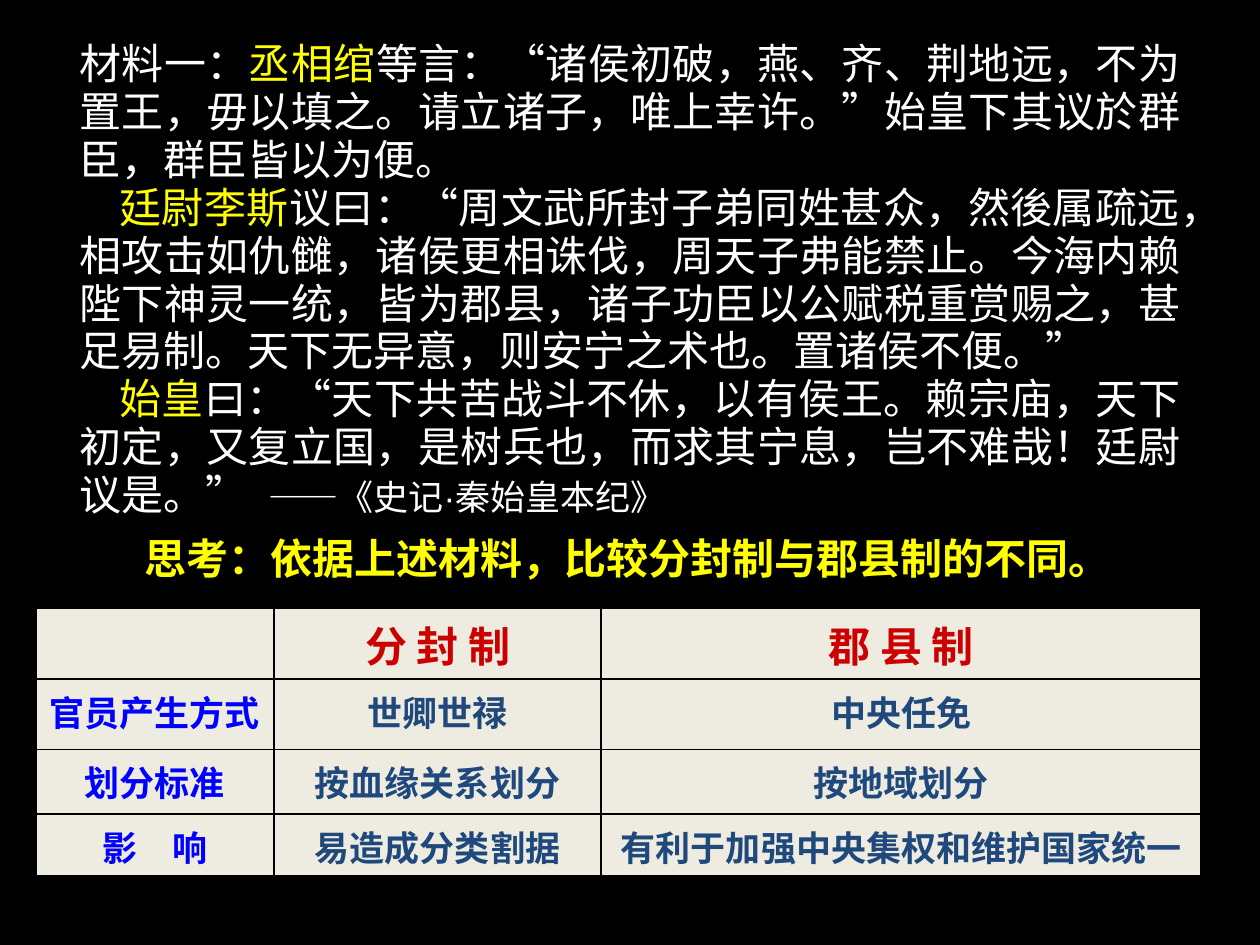
from dataclasses import dataclass

from lxml import etree
from pptx import Presentation
from pptx import util as u
from pptx.dml.color import RGBColor
from pptx.enum import text
from pptx.oxml import ns

COLORS = {
    "black": "000000",
    "white": "FFFFFF",
    "yellow": "FFFF00",
    "red": "CC0000",
    "blue": "0000FF",
    "navy": "1F497D",
    "cream": "EEECE1",
}
LATIN_FONT = "Arial"
CHINESE_FONT = "Noto Sans CJK SC"


@dataclass
class Span:
    text: str
    color: str = "white"
    size: int = 24
    bold: bool = False
    font: str = LATIN_FONT


@dataclass
class Passage:
    spans: list[Span]
    indent: float = 0  # first line, cm
    tab: float = 0  # tab stop, cm


def speaker(name: str) -> Span:
    return Span(name, "yellow", font=CHINESE_FONT)


def quotation(words: str) -> Span:
    return Span(words, font=CHINESE_FONT)


PASSAGES = [
    Passage([
        Span("材料一："),
        speaker("丞相绾"),
        quotation("等言：“诸侯初破，燕、齐、荆地远，不为置王，毋以填之。请立诸子，"
                  "唯上幸许。”始皇下其议於群臣，群臣皆以为便。"),
    ]),
    Passage([
        speaker("廷尉李斯"),
        quotation("议曰：“周文武所封子弟同姓甚众，然後属疏远，相攻击如仇雠，"
                  "诸侯更相诛伐，周天子弗能禁止。今海内赖陛下神灵一统，皆为郡县，"
                  "诸子功臣以公赋税重赏赐之，甚足易制。天下无异意，则安宁之术也。"
                  "置诸侯不便。”"),
    ], indent=0.81),
    Passage([
        speaker("始皇"),
        quotation("曰：“天下共苦战斗不休，以有侯王。赖宗庙，天下初定，又复立国，"
                  "是树兵也，而求其宁息，岂不难哉！廷尉议是。”"),
        Span("\t——《史记·秦始皇本纪》", size=20),
    ], indent=0.81, tab=7.72),
]
QUESTION = Span("思考：依据上述材料，比较分封制与郡县制的不同。",
                "yellow", bold=True, font=CHINESE_FONT)

TABLE_ROWS = [
    ("", "分 封 制", "郡 县 制"),
    ("官员产生方式", "世卿世禄", "中央任免"),
    ("划分标准", "按血缘关系划分", "按地域划分"),
    ("影　响", "易造成分类割据", "有利于加强中央集权和维护国家统一"),
]
COLUMN_WIDTHS = (4.8, 6.6, 12.1)
ROW_HEIGHTS = (1.45, 1.42, 1.3, 1.27)


def rgb(name: str) -> RGBColor:
    return RGBColor.from_string(COLORS[name])


def format_run(run, span: Span) -> None:
    run.font.size = u.Pt(span.size)
    run.font.bold = span.bold
    run.font.color.rgb = rgb(span.color)
    run.font.name = span.font
    east_asian = etree.SubElement(run.font._element, ns.qn("a:ea"))
    east_asian.set("typeface", CHINESE_FONT)


def add_span(paragraph, span: Span) -> None:
    run = paragraph.add_run()
    run.text = span.text
    format_run(run, span)


def add_text_frame(slide, left: float, top: float, width: float, height: float,
                   wrap: bool):
    shape = slide.shapes.add_textbox(u.Cm(left), u.Cm(top), u.Cm(width), u.Cm(height))
    shape.text_frame.word_wrap = wrap
    return shape.text_frame


def add_passage(paragraph, passage: Passage) -> None:
    paragraph.alignment = text.PP_ALIGN.JUSTIFY
    paragraph.line_spacing = 0.95
    properties = paragraph._p.get_or_add_pPr()
    properties.set("indent", str(u.Cm(passage.indent)))
    if passage.tab:
        tabs = etree.SubElement(properties, ns.qn("a:tabLst"))
        etree.SubElement(tabs, ns.qn("a:tab"), pos=str(u.Cm(passage.tab)), algn="l")
    for span in passage.spans:
        add_span(paragraph, span)


def set_borders(cell, widths: dict[str, float]) -> None:
    properties = cell._tc.get_or_add_tcPr()
    for position, (side, width) in enumerate(widths.items()):
        line = etree.Element(ns.qn(f"a:ln{side}"), w=str(u.Pt(width)))
        fill = etree.SubElement(line, ns.qn("a:solidFill"))
        etree.SubElement(fill, ns.qn("a:srgbClr"), val=COLORS["black"])
        properties.insert(position, line)


def cell_span(words: str, row: int, column: int) -> Span:
    if row == 0:
        return Span(words, "red", 24, True)
    return Span(words, "navy" if column else "blue", 20, True)


def add_comparison(slide) -> None:
    last_row, last_column = len(ROW_HEIGHTS) - 1, len(COLUMN_WIDTHS) - 1
    frame = slide.shapes.add_table(
        len(ROW_HEIGHTS), len(COLUMN_WIDTHS), u.Cm(0.72), u.Cm(12.24),
        u.Cm(sum(COLUMN_WIDTHS)), u.Cm(sum(ROW_HEIGHTS)))
    table = frame.table
    table.first_row = table.horz_banding = False
    for column, width in zip(table.columns, COLUMN_WIDTHS):
        column.width = u.Cm(width)
    for row, height in zip(table.rows, ROW_HEIGHTS):
        row.height = u.Cm(height)

    for r, words in enumerate(TABLE_ROWS):
        for c, label in enumerate(words):
            cell = table.cell(r, c)
            cell.fill.solid()
            cell.fill.fore_color.rgb = rgb("cream")
            # Outer edges are thicker than the inner grid
            set_borders(cell, {
                "L": 2.25 if c == 0 else 1,
                "R": 2.25 if c == last_column else 1,
                "T": 2.25 if r == 0 else 1,
                "B": 2.25 if r == last_row else 1,
            })
            if label:
                paragraph = cell.text_frame.paragraphs[0]
                paragraph.text = label
                paragraph.alignment = text.PP_ALIGN.CENTER
                format_run(paragraph.runs[0], cell_span(label, r, c))


def main() -> None:
    presentation = Presentation()
    presentation.slide_width, presentation.slide_height = u.Cm(25.4), u.Cm(19.05)
    slide = presentation.slides.add_slide(presentation.slide_layouts[6])
    slide.background.fill.solid()
    slide.background.fill.fore_color.rgb = rgb("black")

    # Source passages
    frame = add_text_frame(slide, 1.35, 0.71, 22.7, 11.53, wrap=True)
    for index, passage in enumerate(PASSAGES):
        add_passage(frame.add_paragraph() if index else frame.paragraphs[0], passage)

    # Question
    frame = add_text_frame(slide, 2.67, 10.62, 20.07, 1.27, wrap=False)
    add_span(frame.paragraphs[0], QUESTION)

    # Comparison of the two systems
    add_comparison(slide)

    presentation.save("out.pptx")


if __name__ == "__main__":
    main()
